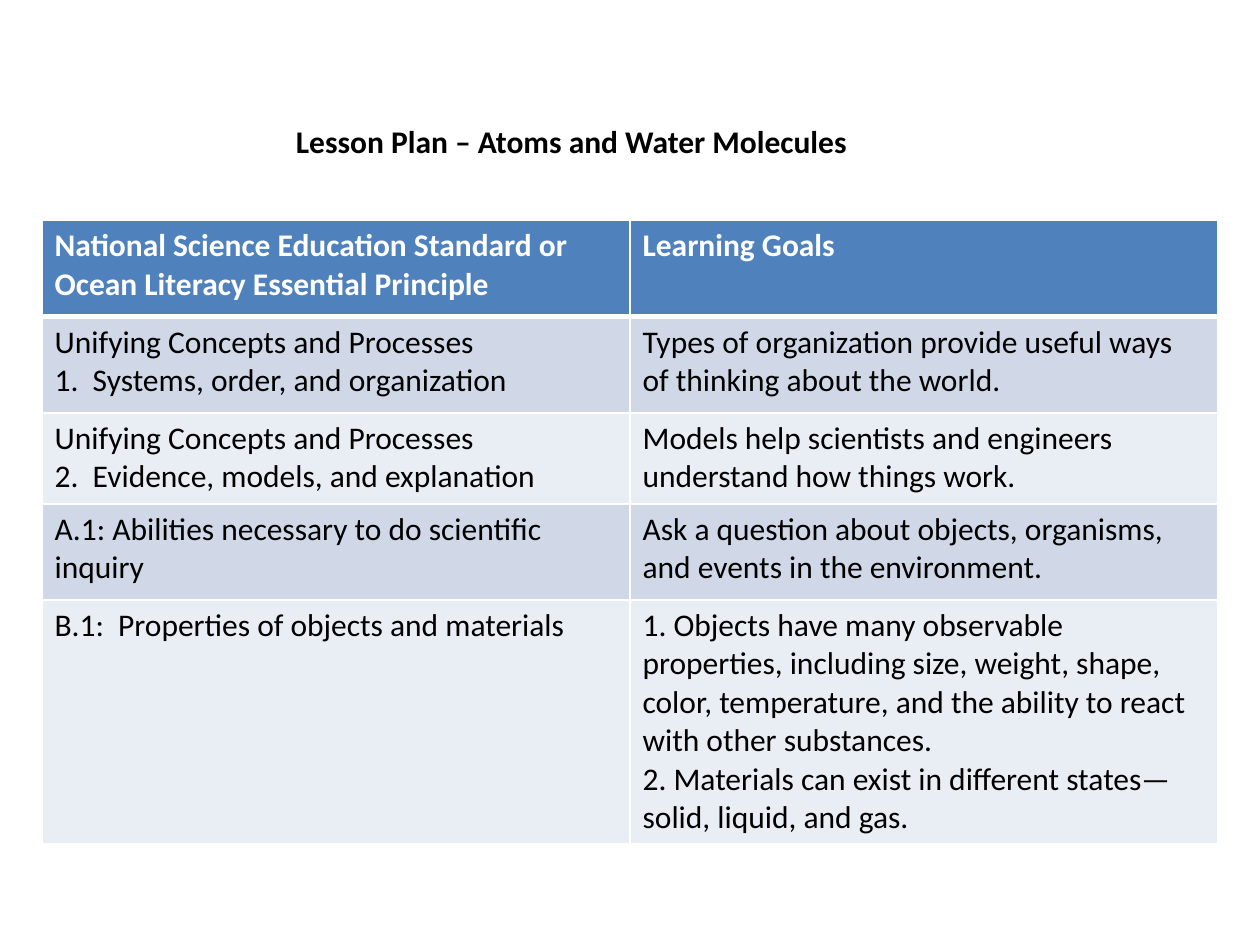
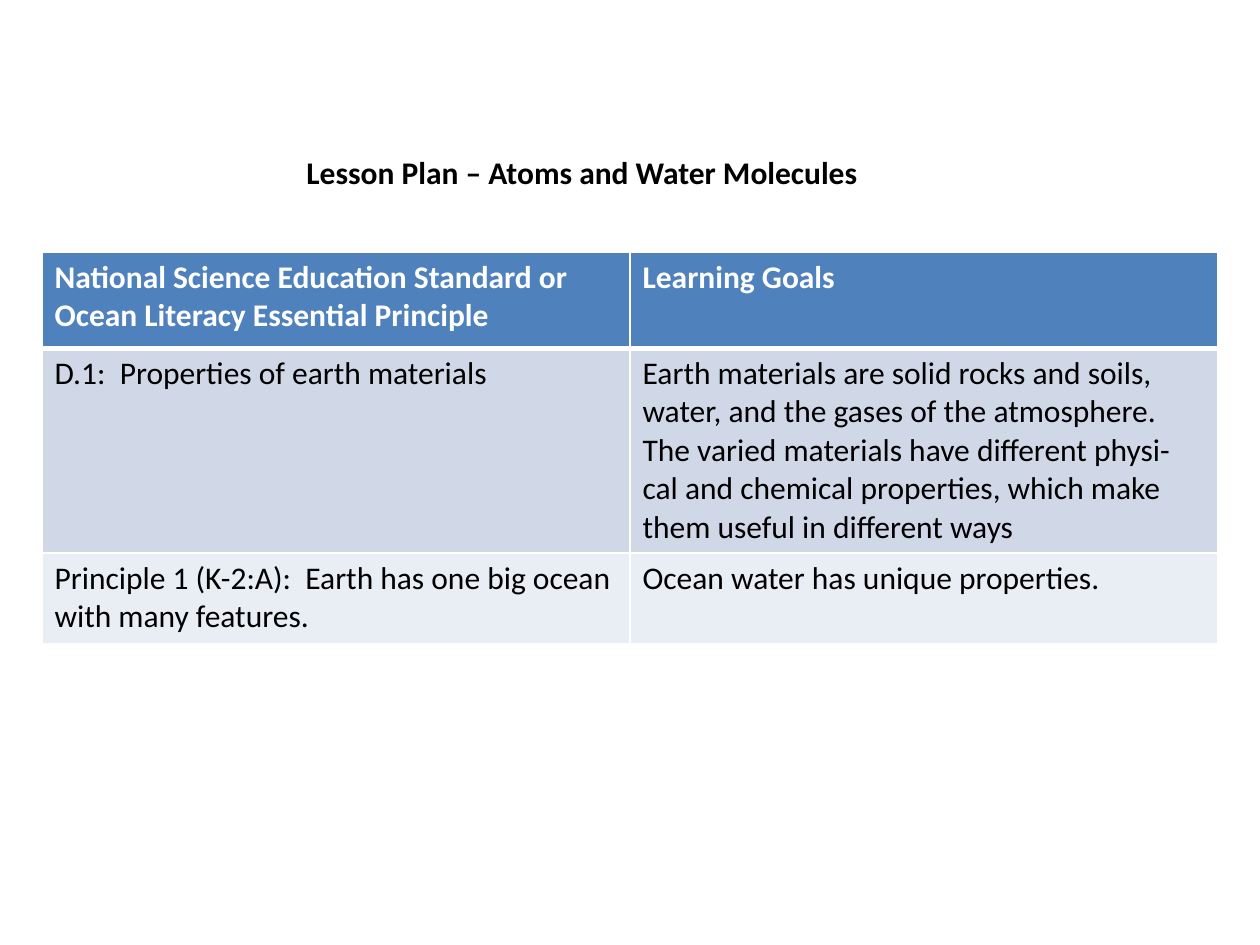
"""Build two lesson plan slides, each with a title and a table of standards and goals."""
import pptx
import pptx.dml.color
import pptx.enum.text
import pptx.oxml
import pptx.oxml.ns
import pptx.util

Pt = pptx.util.Pt
COLORS = {"header": "4F81BD", "odd": "D0D8E8", "even": "E9EDF4",
          "text": "000000", "line": "FFFFFF"}
FONT = "Calibri"
TITLE = "Lesson Plan – Atoms and Water Molecules"
HEADER = ("National Science Education Standard or Ocean Literacy Essential Principle",
          "Learning Goals")
STANDARDS = [
    ("Unifying Concepts and Processes\n1.  Systems, order, and organization",
     "Types of organization provide useful ways of thinking about the world."),
    ("Unifying Concepts and Processes\n2.  Evidence, models, and explanation",
     "Models help scientists and engineers understand how things work."),
    ("A.1: Abilities necessary to do scientific inquiry",
     "Ask a question about objects, organisms, and events in the environment."),
    ("B.1:  Properties of objects and materials",
     "1. Objects have many observable properties, including size, weight, shape, color, "
     "temperature, and the ability to react with other substances.\n"
     "2. Materials can exist in different states— solid, liquid, and gas."),
]
PRINCIPLES = [
    ("D.1:  Properties of earth materials",
     "Earth materials are solid rocks and soils, water, and the gases of the atmosphere. "
     "The varied materials have different physi- cal and chemical properties, "
     "which make them useful in different ways"),
    ("Principle 1 (K-2:A):  Earth has one big ocean with many features.",
     "Ocean water has unique properties."),
]


def rgb(name):
    return pptx.dml.color.RGBColor.from_string(COLORS[name])


def write(tf, text, size=18, color="text", bold=False):
    tf.word_wrap = True
    for i, line in enumerate(text.split("\n")):
        p = tf.add_paragraph() if i else tf.paragraphs[0]
        r = p.add_run()
        r.text = line
        r.font.name = FONT
        r.font.size = Pt(size)
        r.font.bold = bold
        r.font.color.rgb = rgb(color)


class Deck:
    def __init__(self):
        self.prs = pptx.Presentation()
        self.prs.slide_width = Pt(720)
        self.prs.slide_height = Pt(540)
        self.s = None

    def slide(self):
        self.s = self.prs.slides.add_slide(self.prs.slide_layouts[6])

    def title(self, left, top):
        sp = self.s.shapes.add_textbox(Pt(left), Pt(top), Pt(456), Pt(29))
        sp.text_frame.auto_size = pptx.enum.text.MSO_AUTO_SIZE.SHAPE_TO_FIT_TEXT
        write(sp.text_frame, TITLE, bold=True)

    def borders(self, cell, bottom):
        tcPr = cell._tc.get_or_add_tcPr()
        for side in "LRTB":
            width = Pt(bottom if side == "B" else 1)
            tcPr.append(pptx.oxml.parse_xml(
                f'<a:ln{side} {pptx.oxml.ns.nsdecls("a")} w="{width}"><a:solidFill>'
                f'<a:srgbClr val="{COLORS["line"]}"/></a:solidFill></a:ln{side}>'))

    def table(self, top, body, heights):
        rows = [HEADER] + body
        table = self.s.shapes.add_table(
            len(rows), 2, Pt(24), Pt(top), Pt(672), Pt(sum(heights))).table
        for i, (row, height) in enumerate(zip(rows, heights)):
            table.rows[i].height = Pt(height)
            fill = ("odd" if i % 2 else "even") if i else "header"
            for j, text in enumerate(row):
                cell = table.cell(i, j)
                self.borders(cell, bottom=1 if i else 3)
                cell.fill.solid()
                cell.fill.fore_color.rgb = rgb(fill)
                write(cell.text_frame, text, color="text" if i else "line", bold=not i)


def main():
    deck = Deck()
    deck.slide()
    deck.table(126, STANDARDS, [55, 55, 52, 55, 139])
    deck.title(162, 66)
    deck.slide()
    deck.table(144, PRINCIPLES, [55, 117, 52])
    deck.title(168, 84)
    deck.prs.save("out.pptx")


if __name__ == "__main__":
    main()
